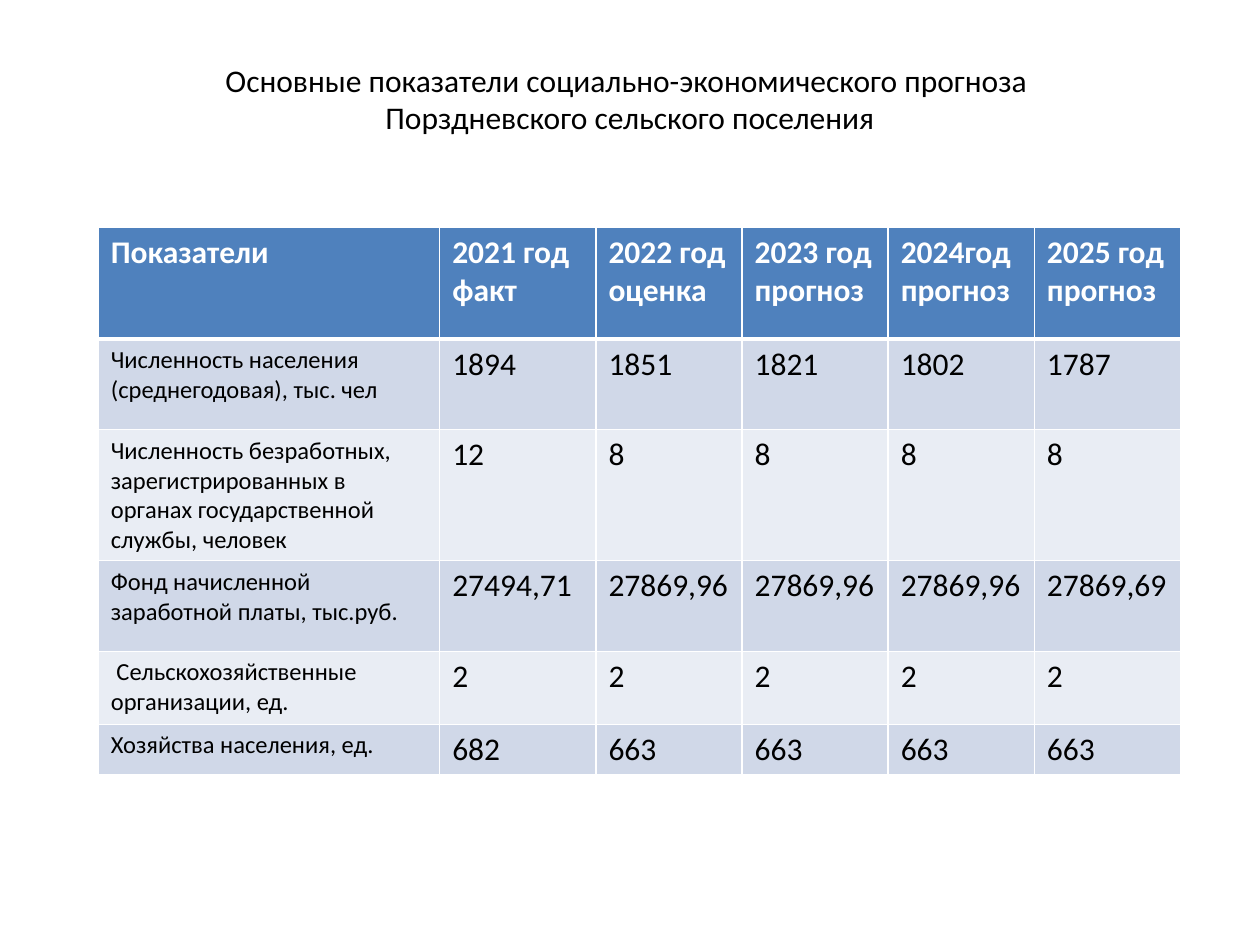
from dataclasses import dataclass

from lxml import etree
from pptx import Presentation
from pptx.dml.color import RGBColor
from pptx.enum.text import MSO_ANCHOR, PP_ALIGN
from pptx.oxml.ns import qn
from pptx.util import Inches, Pt

CENTER = PP_ALIGN.CENTER
LEFT = PP_ALIGN.LEFT
MIDDLE = MSO_ANCHOR.MIDDLE
FONT = "Calibri"
COLORS = {
    "white": "FFFFFF",
    "black": "000000",
    "header": "4F81BD",
    "band_dark": "D0D8E8",
    "band_light": "E9EDF4",
}


@dataclass
class Row:
    label: str
    values: list[str]
    height: float


TITLE = "Основные показатели социально-экономического прогноза \nПорздневского сельского поселения"
COLUMN_WIDTHS = [2.71, 1.24] + [1.16] * 4
ROWS = [
    Row("Показатели", ["2021 год факт", "2022 год оценка", "2023 год прогноз",
                       "2024год прогноз", "2025 год прогноз"], 0.89),
    Row("Численность населения (среднегодовая), тыс. чел",
        ["1894", "1851", "1821", "1802", "1787"], 0.72),
    Row("Численность безработных, зарегистрированных в органах государственной  службы, человек",
        ["12"] + ["8"] * 4, 1.04),
    Row("Фонд начисленной заработной платы, тыс.руб.",
        ["27494,71"] + ["27869,96"] * 3 + ["27869,69"], 0.72),
    Row(" Сельскохозяйственные организации, ед.", ["2"] * 5, 0.58),
    Row("Хозяйства населения, ед.", ["682"] + ["663"] * 4, 0.39),
]


def write_text(tf, text: str, *, size: float = 18, color: str = "black",
               bold: bool = False, align=LEFT) -> None:
    p = tf.paragraphs[0]
    p.alignment = align
    for i, line in enumerate(text.split("\n")):
        if i:
            p.add_line_break()
        r = p.add_run()
        r.text = line
        r.font.name = FONT
        r.font.size = Pt(size)
        r.font.bold = bold
        r.font.color.rgb = RGBColor.from_string(COLORS[color])


def set_borders(cell, top: float, bottom: float) -> None:
    tc_pr = cell._tc.get_or_add_tcPr()
    widths = {"a:lnL": 1, "a:lnR": 1, "a:lnT": top, "a:lnB": bottom}
    for i, (tag, width) in enumerate(widths.items()):
        ln = etree.Element(qn(tag), w=str(Pt(width)))
        fill = etree.SubElement(ln, qn("a:solidFill"))
        etree.SubElement(fill, qn("a:srgbClr"), val=COLORS["white"])
        tc_pr.insert(i, ln)


def add_title(s) -> None:
    sp = s.shapes.add_textbox(Inches(0.75), Inches(0.39), Inches(8.5), Inches(0.78))
    tf = sp.text_frame
    tf.word_wrap = True
    tf.vertical_anchor = MIDDLE
    write_text(tf, TITLE, align=CENTER)


def add_indicator_table(s, rows: list[Row]) -> None:
    table = s.shapes.add_table(
        len(rows), len(COLUMN_WIDTHS), Inches(0.78), Inches(1.8),
        Inches(sum(COLUMN_WIDTHS)), Inches(sum(row.height for row in rows))).table
    for column, width in zip(table.columns, COLUMN_WIDTHS):
        column.width = Inches(width)
    for i, row in enumerate(rows):
        table.rows[i].height = Inches(row.height)
        header = i == 0
        band = "header" if header else "band_dark" if i % 2 else "band_light"
        for j, text in enumerate([row.label, *row.values]):
            cell = table.cell(i, j)
            cell.fill.solid()
            cell.fill.fore_color.rgb = RGBColor.from_string(COLORS[band])
            set_borders(cell, top=3 if i == 1 else 1, bottom=3 if header else 1)
            write_text(cell.text_frame, text, size=18 if header or j else 14,
                       color="white" if header else "black", bold=header)


def main() -> None:
    prs = Presentation()
    prs.slide_width = Inches(10)
    prs.slide_height = Inches(7.5)
    s = prs.slides.add_slide(prs.slide_layouts[6])
    add_title(s)
    add_indicator_table(s, ROWS)
    prs.save("out.pptx")


if __name__ == "__main__":
    main()
